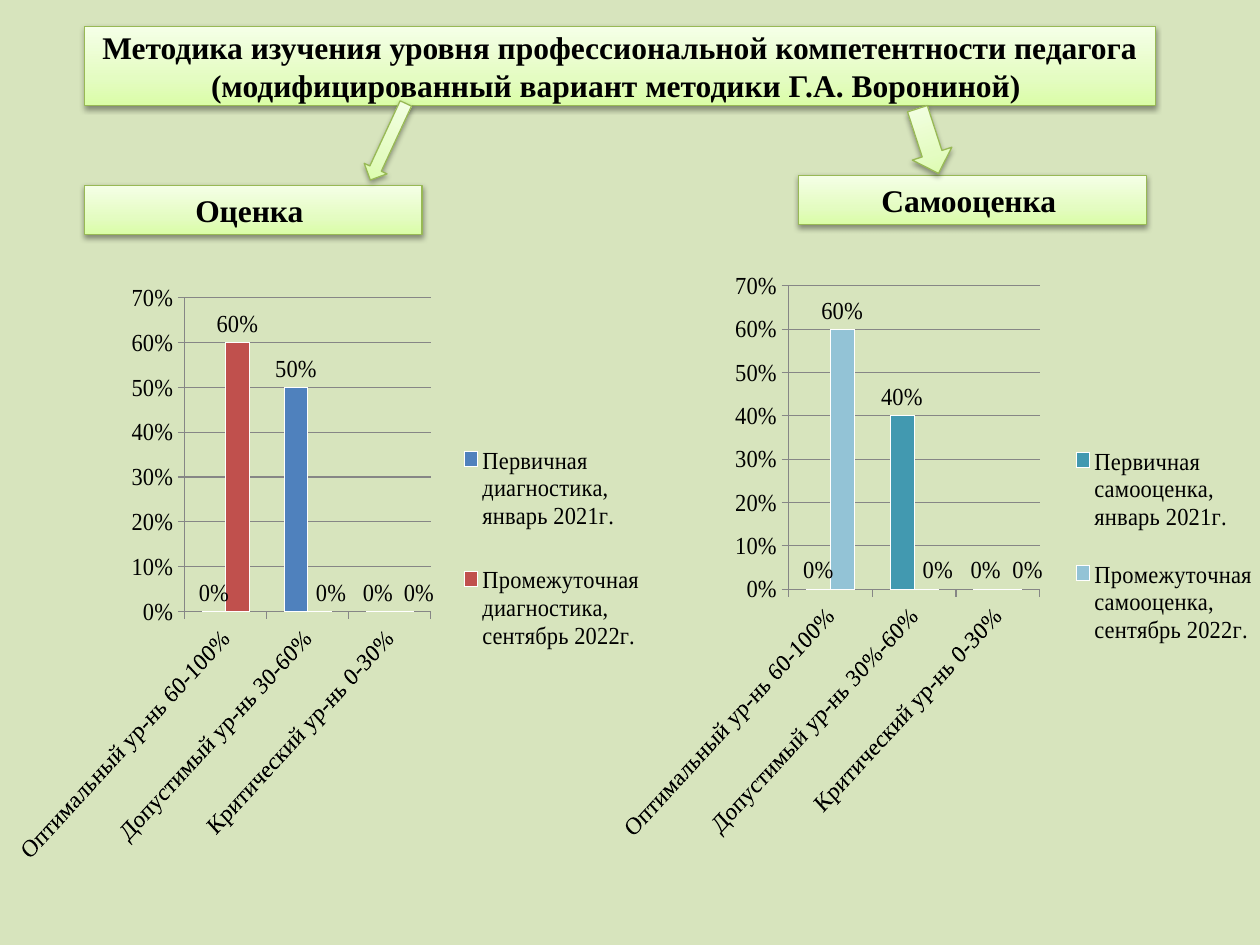
import copy

import pptx
import pptx.chart.data
import pptx.dml.color
import pptx.enum.chart
import pptx.enum.shapes
import pptx.enum.text
import pptx.oxml
import pptx.oxml.ns
import pptx.util

Inches = pptx.util.Inches
Pt = pptx.util.Pt
SHAPES = pptx.enum.shapes.MSO_SHAPE
FONT = "Times New Roman"
COLORS = {
    "background": "D7E4BD", "text": "000000", "outline": "98B955", "grid": "868686",
    "white": "FFFFFF", "blue": "4F81BD", "red": "C0504D", "teal": "4299B0", "sky": "93C3D6",
}
GRADIENT = [(0, "DAFDA7"), (0.35, "E4FCC2"), (1, "F5FFE7")]
PLOT_BOX = {"x": 0.197, "y": 0.038, "w": 0.42, "h": 0.51}
SHADOW = (
    '<a:outerShdw %s blurRad="40000" dist="20000" dir="5400000" rotWithShape="0">'
    '<a:srgbClr val="000000"><a:alpha val="38000"/></a:srgbClr></a:outerShdw>'
)


def rgb(name):
    """Return the colour with this name or hex value."""
    return pptx.dml.color.RGBColor.from_string(COLORS.get(name, name))


def chart_xml(tag, content):
    """Return a chart element with the given inner markup."""
    namespaces = pptx.oxml.ns.nsdecls("c")
    return pptx.oxml.parse_xml(f"<c:{tag} {namespaces}>{content}</c:{tag}>")


def chart_layout(mode="", **values):
    """Return a manual layout holding these values in chart fractions."""
    parts = "".join(f'<c:{key} val="{value}"/>' for key, value in values.items())
    return chart_xml("layout", f"<c:manualLayout>{mode}{parts}</c:manualLayout>")


def format_font(font, size=14, bold=False, color="text"):
    """Apply the slide's typeface to a font."""
    font.name, font.size, font.bold = FONT, Pt(size), bold
    font.color.rgb = rgb(color)


def write_text(frame, text, **style):
    """Put one centred line of text in a frame."""
    frame.word_wrap = True
    frame.vertical_anchor = pptx.enum.text.MSO_ANCHOR.MIDDLE
    paragraph = frame.paragraphs[0]
    paragraph.alignment = pptx.enum.text.PP_ALIGN.CENTER
    run = paragraph.add_run()
    run.text = text
    format_font(run.font, **style)


class SlideBuilder:
    """Holds the current slide and draws elements in its style."""

    EDGE = '<c:xMode val="edge"/><c:yMode val="edge"/>'

    def __init__(self, slide):
        """Take the slide and paint its background."""
        self.slide = slide
        slide.background.fill.solid()
        slide.background.fill.fore_color.rgb = rgb("background")

    def panel(self, kind, left, top, width, height, rotation=0):
        """Add a shape with the green gradient and soft shadow."""
        shape = self.slide.shapes.add_shape(
            kind, Inches(left), Inches(top), Inches(width), Inches(height))
        shape.rotation = rotation
        shape.fill.gradient()
        shape.fill.gradient_angle = 90
        stop_list = shape._element.spPr.find(".//" + pptx.oxml.ns.qn("a:gsLst"))
        stop_list.append(copy.deepcopy(stop_list[0]))
        for stop, (position, color) in zip(shape.fill.gradient_stops, GRADIENT):
            stop.position = position
            stop.color.rgb = rgb(color)
        shape.line.color.rgb = rgb("outline")
        shape.line.width = Pt(0.75)
        shape.shadow.inherit = False
        effects = shape._element.spPr.find(pptx.oxml.ns.qn("a:effectLst"))
        effects.append(pptx.oxml.parse_xml(SHADOW % pptx.oxml.ns.nsdecls("a")))
        return shape

    def heading(self, text, left, top, width, height):
        """Add a bold heading in a panel."""
        shape = self.panel(SHAPES.RECTANGLE, left, top, width, height)
        write_text(shape.text_frame, text, size=18, bold=True)

    def arrow(self, left, top, width, height, rotation):
        """Add a block arrow pointing down."""
        self.panel(SHAPES.DOWN_ARROW, left, top, width, height, rotation)

    def chart(self, left, top, width, height, categories, series, legend_box):
        """Add a column chart from (name, values, colour) series."""
        data = pptx.chart.data.CategoryChartData(number_format="0%")
        data.categories = categories
        for name, values, _ in series:
            data.add_series(name, values)
        chart = self.slide.shapes.add_chart(
            pptx.enum.chart.XL_CHART_TYPE.COLUMN_CLUSTERED, Inches(left), Inches(top),
            Inches(width), Inches(height), data).chart
        format_font(chart.font)
        chart.has_title = False
        self.style_legend(chart, legend_box)
        self.style_axes(chart)
        plot = chart.plots[0]
        plot.gap_width, plot.overlap, plot.vary_by_categories = 150, 0, False
        for item, (_, _, color) in zip(plot.series, series):
            item.format.fill.solid()
            item.format.fill.fore_color.rgb = rgb(color)
            item.format.line.color.rgb = rgb("white")
            self.style_labels(item.data_labels)
        self.shift_labels(plot.series[1].data_labels, {1: 0.02, 2: 0.03})
        plot_area = chart._chartSpace.chart.plotArea
        for layout in plot_area.findall(pptx.oxml.ns.qn("c:layout")):
            plot_area.remove(layout)
        inner = '<c:layoutTarget val="inner"/>' + self.EDGE
        plot_area.insert(0, chart_layout(inner, **PLOT_BOX))

    def style_legend(self, chart, box):
        """Place the legend on the right, in the given box."""
        chart.has_legend = True
        legend = chart.legend
        legend.position = pptx.enum.chart.XL_LEGEND_POSITION.RIGHT
        legend.include_in_layout = False
        format_font(legend.font)
        element = legend._element
        for layout in element.findall(pptx.oxml.ns.qn("c:layout")):
            element.remove(layout)
        position = element.find(pptx.oxml.ns.qn("c:legendPos"))
        position.addnext(chart_layout(self.EDGE, **dict(zip("xywh", box))))

    def style_labels(self, labels):
        """Show values as percentages above the columns."""
        labels.show_value = True
        labels.number_format, labels.number_format_is_linked = "0%", False
        labels.position = pptx.enum.chart.XL_LABEL_POSITION.OUTSIDE_END
        format_font(labels.font)

    def shift_labels(self, labels, shifts):
        """Move the labels of some points right by a fraction of the chart."""
        element = labels._element
        shared = [child for child in element
                  if child.tag != pptx.oxml.ns.qn("c:showLeaderLines")]
        for place, (index, shift) in enumerate(shifts.items()):
            label = chart_xml("dLbl", f'<c:idx val="{index}"/>')
            label.append(chart_layout(x=shift, y=0))
            label.extend(copy.deepcopy(shared))
            element.insert(place, label)

    def style_axes(self, chart):
        """Set scale, grid, lines and labels of both axes."""
        for axis in (chart.category_axis, chart.value_axis):
            axis.major_tick_mark = pptx.enum.chart.XL_TICK_MARK.OUTSIDE
            axis.format.line.color.rgb = rgb("grid")
            format_font(axis.tick_labels.font)
        axis = chart.value_axis
        axis.minimum_scale, axis.maximum_scale, axis.major_unit = 0, 0.7, 0.1
        axis.major_gridlines.format.line.color.rgb = rgb("grid")
        axis.tick_labels.number_format = "0%"
        axis.tick_labels.number_format_is_linked = False
        body = chart.category_axis._element.find(".//" + pptx.oxml.ns.qn("a:bodyPr"))
        body.set("rot", "-2700000")


def main():
    """Build the slide and save it."""
    presentation = pptx.Presentation()
    presentation.slide_width, presentation.slide_height = Inches(10), Inches(7.5)
    builder = SlideBuilder(presentation.slides.add_slide(presentation.slide_layouts[6]))
    optimal, critical = "Оптимальный ур-нь 60-100%", "Критический ур-нь 0-30%"
    builder.chart(0.12, 2.18, 5.08, 4.88, [optimal, "Допустимый ур-нь 30-60%", critical], [
        ("Первичная диагностика, январь 2021г.", (0, 0.5, 0), "blue"),
        ("Промежуточная диагностика, сентябрь 2022г.", (0.6, 0, 0), "red")],
        legend_box=(0.69, 0.22, 0.3, 0.45))
    builder.heading(
        "Методика изучения уровня профессиональной компетентности педагога "
        "(модифицированный вариант методики Г.А. Ворониной) ", 0.67, 0.21, 8.5, 0.63)
    builder.heading("Оценка ", 0.67, 1.47, 2.68, 0.39)
    builder.heading("Самооценка ", 6.34, 1.39, 2.76, 0.39)
    builder.chart(4.91, 2.09, 5.16, 4.72, [optimal, "Допустимый ур-нь 30%-60%", critical], [
        ("Первичная самооценка, январь 2021г.", (0, 0.4, 0), "teal"),
        ("Промежуточная самооценка, сентябрь 2022г.", (0.6, 0, 0), "sky")],
        legend_box=(0.67, 0.26, 0.31, 0.43))
    builder.arrow(2.98, 0.79, 0.2, 0.67, 24.9)
    builder.arrow(7.2, 0.85, 0.33, 0.54, 342)
    presentation.save("out.pptx")


if __name__ == "__main__":
    main()
